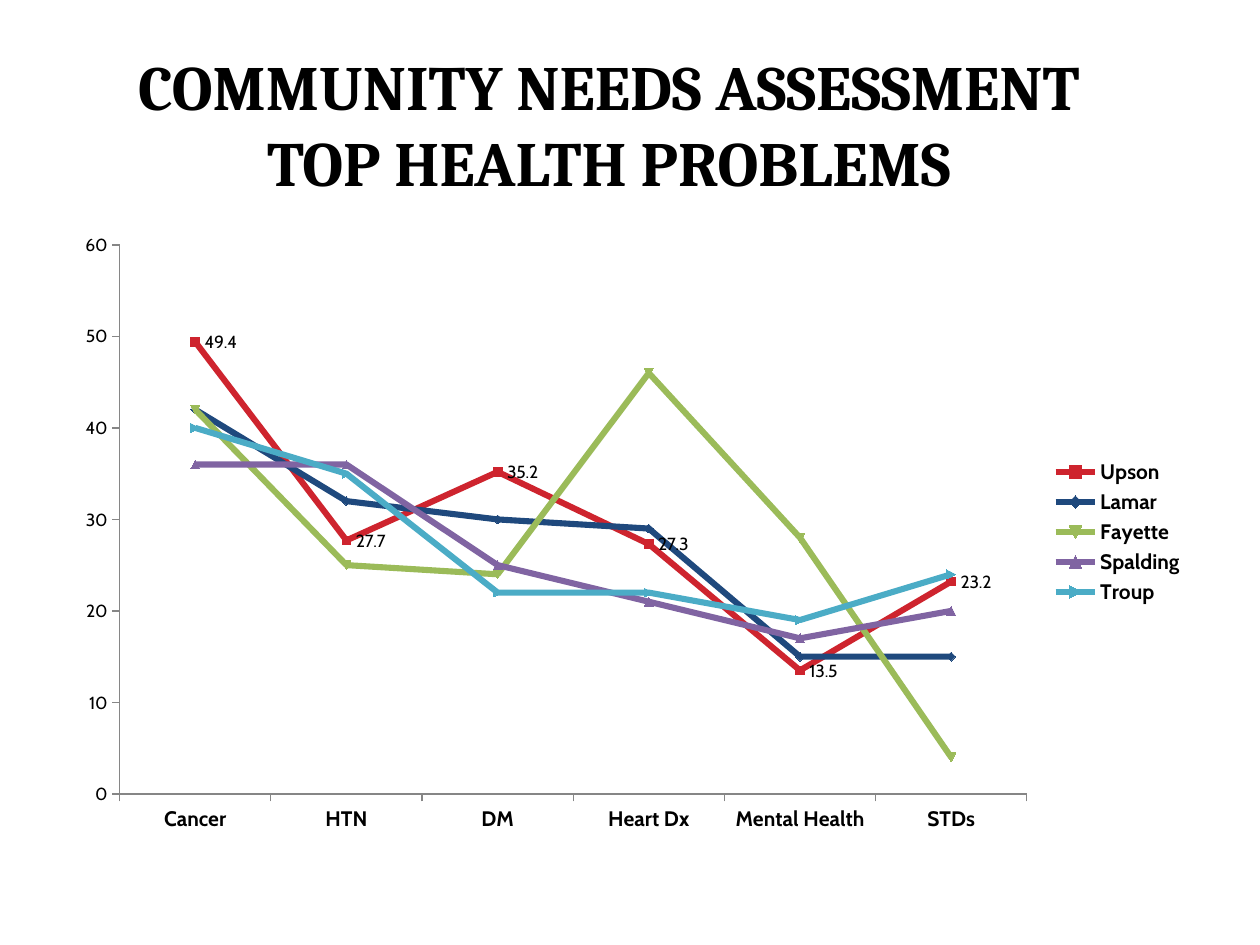
from lxml import etree
from pptx import Presentation
from pptx.chart.data import CategoryChartData
from pptx.dml.color import RGBColor
from pptx.enum.chart import XL_CHART_TYPE, XL_LABEL_POSITION, XL_LEGEND_POSITION, XL_TICK_MARK
from pptx.enum.text import MSO_ANCHOR, PP_ALIGN
from pptx.oxml.ns import qn
from pptx.util import Pt

PX = 914400 // 126
BLACK = RGBColor(0x00, 0x00, 0x00)
AXIS_GRAY = RGBColor(0x86, 0x86, 0x86)
RED = RGBColor(0xCE, 0x24, 0x2E)
NAVY = RGBColor(0x1F, 0x49, 0x7D)
GREEN = RGBColor(0x9B, 0xBB, 0x59)
PURPLE = RGBColor(0x80, 0x64, 0xA2)
TEAL = RGBColor(0x4B, 0xAC, 0xC6)
LINE_MARKERS = XL_CHART_TYPE.LINE_MARKERS
LABEL_RIGHT = XL_LABEL_POSITION.RIGHT
LEGEND_RIGHT = XL_LEGEND_POSITION.RIGHT
TICK_OUT = XL_TICK_MARK.OUTSIDE
TICK_NONE = XL_TICK_MARK.NONE
MIDDLE = MSO_ANCHOR.MIDDLE
CENTER = PP_ALIGN.CENTER

PROBLEMS = ["Cancer", "HTN", "DM", "Heart Dx", "Mental Health", "STDs"]
COUNTIES = [
    ("Upson", RED, (49.4, 27.7, 35.2, 27.3, 13.5, 23.2)),
    ("Lamar", NAVY, (42, 32, 30, 29, 15, 15)),
    ("Fayette", GREEN, (42, 25, 24, 46, 28, 4)),
    ("Spalding", PURPLE, (36, 36, 25, 21, 17, 20)),
    ("Troup", TEAL, (40, 35, 22, 22, 19, 24)),
]


def style_font(font, name, size, bold=False):
    font.name = name
    font.size = Pt(size)
    font.bold = bold
    font.color.rgb = BLACK


prs = Presentation()
prs.slide_width = 1260 * PX
prs.slide_height = 945 * PX
slide = prs.slides.add_slide(prs.slide_layouts[6])

# Title
title = slide.shapes.add_textbox(21 * PX, 63 * PX, 1176 * PX, 121 * PX).text_frame
title.word_wrap = True
title.vertical_anchor = MIDDLE
heading = title.paragraphs[0]
heading.alignment = CENTER
for index, line in enumerate(("COMMUNITY NEEDS ASSESSMENT", "TOP HEALTH PROBLEMS")):
    if index:
        heading.add_line_break()
    run = heading.add_run()
    run.text = line
    style_font(run.font, "Cambria", 36, True)

# Chart
data = CategoryChartData(number_format="General")
data.categories = PROBLEMS
for county, _, rates in COUNTIES:
    data.add_series(county, rates)
chart = slide.shapes.add_chart(
    LINE_MARKERS, 63 * PX, 220 * PX, 1134 * PX, 624 * PX, data
).chart
style_font(chart.font, "Cabin", 10)
chart.has_title = False
chart.has_legend = True
chart.legend.position = LEGEND_RIGHT
chart.legend.include_in_layout = False
style_font(chart.legend.font, "Cabin", 12, True)

for axis, size, bold in ((chart.category_axis, 12, True), (chart.value_axis, 10, False)):
    axis.has_major_gridlines = False
    axis.major_tick_mark = TICK_OUT
    axis.minor_tick_mark = TICK_NONE
    axis.format.line.color.rgb = AXIS_GRAY
    axis.format.line.width = Pt(0.75)
    style_font(axis.tick_labels.font, "Cabin", size, bold)
chart.value_axis.minimum_scale = 0
chart.value_axis.maximum_scale = 60
chart.value_axis.major_unit = 10

plot = chart.plots[0]
plot.vary_by_categories = False
for series, (_, color, _) in zip(plot.series, COUNTIES):
    series.smooth = False
    series.format.line.color.rgb = color
    series.format.line.width = Pt(3.5)
    series.marker.size = 5
    series.marker.format.fill.solid()
    series.marker.format.fill.fore_color.rgb = color
    series.marker.format.line.color.rgb = color

upson_labels = plot.series[0].data_labels
upson_labels.show_value = True
upson_labels.position = LABEL_RIGHT
style_font(upson_labels.font, "Cabin", 10)

# Fixed plot position, as fractions of the chart
plot_area = chart.plots[0]._element.getparent()
for old_layout in plot_area.findall(qn("c:layout")):
    plot_area.remove(old_layout)
layout = etree.Element(qn("c:layout"))
plot_area.insert(0, layout)
manual = etree.SubElement(layout, qn("c:manualLayout"))
for tag, value in (
    ("layoutTarget", "inner"), ("xMode", "edge"), ("yMode", "edge"),
    ("x", "0.05"), ("y", "0.04"), ("w", "0.8"), ("h", "0.88"),
):
    etree.SubElement(manual, qn("c:" + tag)).set("val", value)

prs.save("out.pptx")
